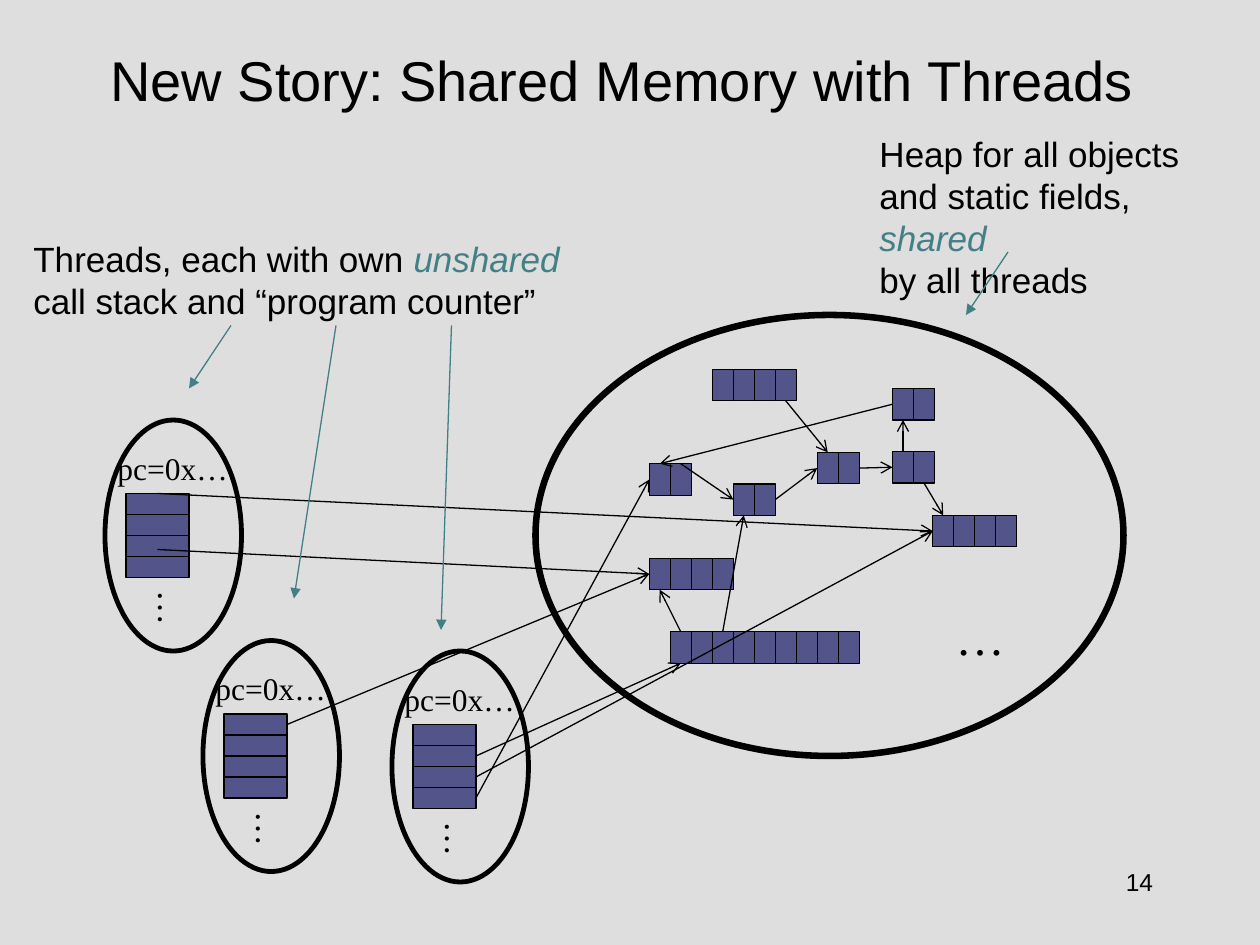
from pptx import Presentation
from pptx.dml.color import RGBColor
from pptx.enum.shapes import MSO_CONNECTOR as Link, MSO_SHAPE as Kind
from pptx.enum.text import MSO_ANCHOR as Anchor, PP_ALIGN as Align
from pptx.oxml.ns import qn
from pptx.util import Pt
from lxml.etree import SubElement as Sub

BLACK = RGBColor(0x00, 0x00, 0x00)
GRAY = RGBColor(0xDE, 0xDE, 0xDE)
PURPLE = RGBColor(0x53, 0x54, 0x8A)
TEAL = RGBColor(0x43, 0x80, 0x86)
SANS, SERIF = "Arial", "Times New Roman"
TOP, LEFT, BOTTOM, RIGHT = range(4)

TITLE = "New Story: Shared Memory with Threads "
HEAP_NOTE = [["Heap for all objects "], ["and static fields, ", "*shared"], ["by all threads"]]
STACK_NOTE = [["Threads, each with own ", "*unshared "], ["call stack and “program counter”"]]

HEAP = (306, 180, 336, 252)
CELL_W, CELL_H = 12, 18
ARRAYS = {
    "head": (371, 265, 2),
    "four": (371, 319, 4),
    "low": (419, 276.5, 2),
    "mid": (467, 258.5, 2),
    "top": (407, 211, 4),
    "end": (533, 294.5, 4),
    "long": (383, 361, 9),
    "near": (510, 258, 2),
    "high": (510, 222, 2),
}

STACKS = {"one": (60, 240), "two": (116, 366), "three": (224, 372)}
FRAMES, FRAME_W, FRAME_H = 4, 36, 12

LINKS = [
    ("top", 3, BOTTOM, "mid", 0, TOP),
    ("head", 1, TOP, "low", 0, LEFT),
    ("low", 1, RIGHT, "mid", 0, LEFT),
    ("long", 0, TOP, "four", 0, BOTTOM),
    ("long", 2, TOP, "low", 0, BOTTOM),
    ("mid", 1, RIGHT, "near", 0, LEFT),
    ("near", 0, TOP, "high", 0, BOTTOM),
    ("high", 0, LEFT, "head", 0, TOP),
    ("near", 1, BOTTOM, "end", 0, TOP),
    ("one", 0, TOP, "end", 0, LEFT),
    ("two", 0, RIGHT, "four", 0, LEFT),
    ("three", 1, RIGHT, "long", 0, BOTTOM),
    ("three", 2, RIGHT, "end", 0, LEFT),
    ("three", 3, RIGHT, "head", 0, LEFT),
]
POINTERS = [
    (576, 144, 552, 180),
    (132, 186, 108, 222),
    (192, 186, 168, 342),
    (258, 186, 252, 360),
]

deck = Presentation()
deck.slide_width, deck.slide_height = Pt(720), Pt(540)
slide = deck.slides.add_slide(deck.slide_layouts[6])
slide.background.fill.solid()
slide.background.fill.fore_color.rgb = GRAY
shapes = slide.shapes
cells = {}


def add_text(box, lines, size, font=SANS, align=Align.LEFT, wrap=False):
    item = shapes.add_textbox(*map(Pt, box))
    frame = item.text_frame
    frame.word_wrap = wrap
    para = frame.paragraphs[0]
    para.alignment = align
    for row, line in enumerate(lines):
        if row:
            para.add_line_break()
        for part in line:
            run = para.add_run()
            run.text = part.lstrip("*")
            style = run.font
            style.name, style.size = font, Pt(size)
            style.italic = part.startswith("*")
            style.color.rgb = TEAL if style.italic else BLACK
    return item


def add_shape(kind, box, width, fill=None):
    item = shapes.add_shape(kind, *map(Pt, box))
    item.shadow.inherit = False
    if fill is None:
        item.fill.background()
    else:
        item.fill.solid()
        item.fill.fore_color.rgb = fill
    item.line.color.rgb = BLACK
    item.line.width = Pt(width)
    return item


def add_arrow(ends, color=BLACK, head="arrow"):
    wire = shapes.add_connector(Link.STRAIGHT, *map(Pt, ends))
    wire.line.color.rgb = color
    wire.line.width = Pt(0.75)
    Sub(wire.line._get_or_add_ln(), qn("a:tailEnd"), type=head)
    Sub(wire._element.spPr, qn("a:effectLst"))
    return wire


def add_cells(name, x, y, count, w, h, dx, dy):
    cells[name] = [
        add_shape(Kind.RECTANGLE, (x + i * dx, y + i * dy, w, h), 0.75, PURPLE)
        for i in range(count)
    ]


title = add_text((54, 0, 612, 90), [[TITLE]], 32, align=Align.CENTER, wrap=True)
title.text_frame.vertical_anchor = Anchor.MIDDLE

add_shape(Kind.OVAL, HEAP, 3.75)
for name, (x, y, count) in ARRAYS.items():
    add_cells(name, x, y, count, CELL_W, CELL_H, CELL_W, 0)
add_text((539, 343, 43, 41), [["…"]], 28, SERIF)
add_text((495.5, 72, 224, 79), HEAP_NOTE, 20, wrap=True)
add_text((12, 132, 325, 55.5), STACK_NOTE, 20)

for name, (x, y) in STACKS.items():
    add_shape(Kind.OVAL, (x, y, 78, 132), 2.75)
    add_cells(name, x + 12, y + 42, FRAMES, FRAME_W, FRAME_H, 0, FRAME_H)
    add_text((x, y + 13, 82, 29), [["pc=0x…"]], 18, SERIF)
    dots = add_text((x + 21, y + 92, 34.5, 31.5), [["…"]], 20, SERIF)
    dots.rotation = 90

for start, i, side, stop, j, edge in LINKS:
    wire = add_arrow((0, 0, 0, 0))
    wire.begin_connect(cells[start][i], side)
    wire.end_connect(cells[stop][j], edge)
wire = add_arrow((90, 314, 0, 0))
wire.end_connect(cells["four"][0], LEFT)
for ends in POINTERS:
    add_arrow(ends, TEAL, "triangle")

add_text((516, 492, 150, 36), [["14"]], 14, align=Align.RIGHT, wrap=True)

deck.save("out.pptx")
